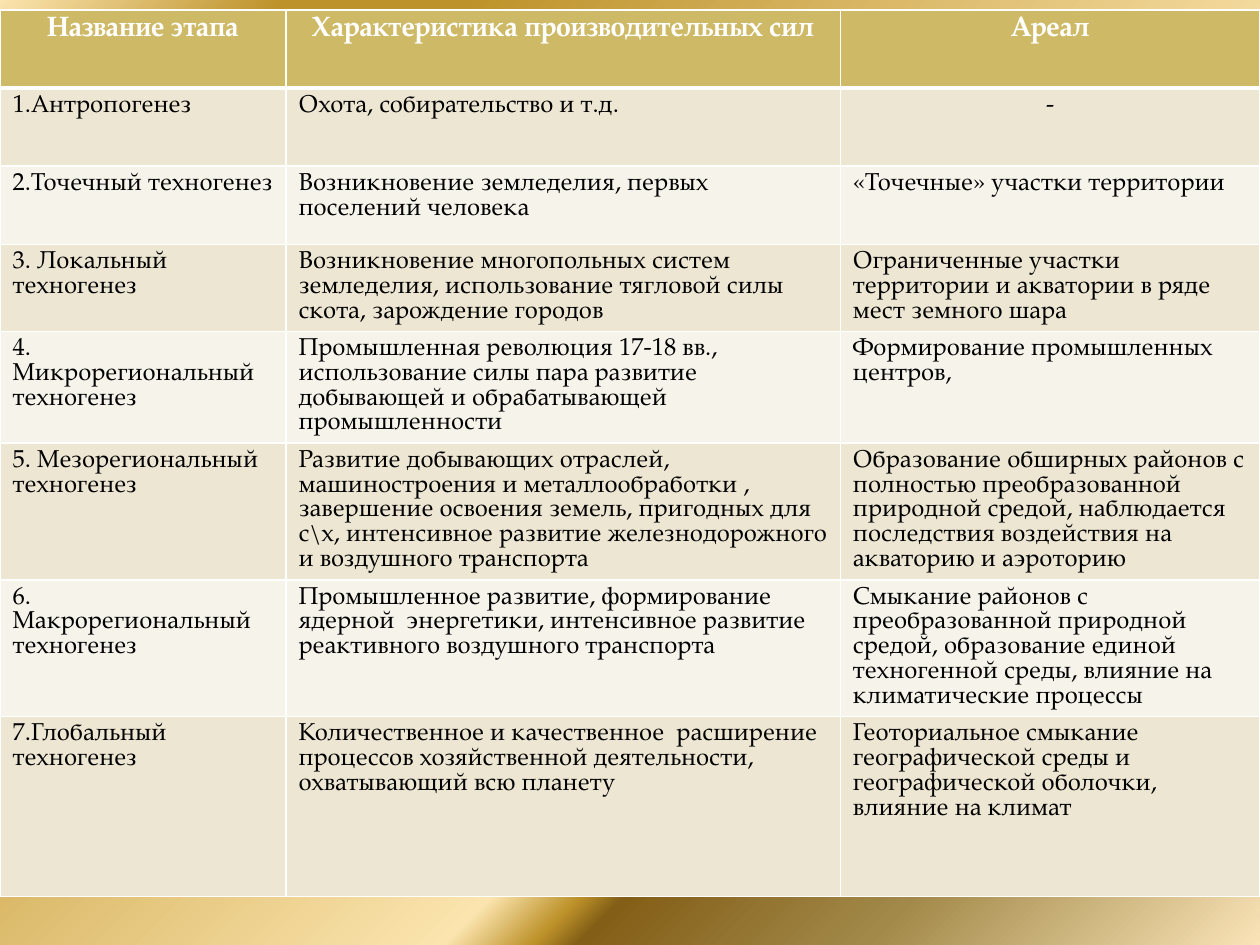
from typing import NamedTuple

import pptx
import pptx.dml.color
import pptx.enum.text
import pptx.oxml
import pptx.oxml.ns
import pptx.util
from lxml import etree

Inches = pptx.util.Inches
Align = pptx.enum.text.PP_ALIGN

FONT = "TeX Gyre Pagella"
COLORS = {
    "header": "CEB966",
    "odd_row": "EDE6D3",
    "even_row": "F6F3EA",
    "border": "FFFFFF",
    "header_text": "FFFFFF",
    "body_text": "000000",
}
BACKGROUND_STOPS = [
    (0, "FBE4AE"), (13, "BD922A"), (21, "BD922A"), (63, "FBE4AE"),
    (67, "BD922A"), (69, "835E17"), (82, "A28949"), (100, "FAE3B7"),
]
BACKGROUND_ANGLE = 45
COLUMN_WIDTHS = [2.27, 4.4, 3.33]
ROW_HEIGHTS = [0.62] * 6 + [0.33, 1.43]
THIN, THICK = 1, 3


class Stage(NamedTuple):
    name: str
    forces: str
    area: str


HEADINGS = Stage("Название этапа", "Характеристика производительных сил", "Ареал")
STAGES = [
    Stage("1.Антропогенез", "Охота, собирательство и т.д.", "-"),
    Stage(
        "2.Точечный техногенез",
        "Возникновение земледелия, первых поселений человека",
        "«Точечные» участки территории",
    ),
    Stage(
        "3. Локальный техногенез",
        "Возникновение многопольных систем земледелия, использование тягловой силы "
        "скота, зарождение городов",
        "Ограниченные участки территории и акватории в ряде мест земного шара",
    ),
    Stage(
        "4. Микрорегиональный техногенез",
        "Промышленная революция 17-18 вв., использование силы пара развитие "
        "добывающей и обрабатывающей промышленности",
        "Формирование промышленных центров,",
    ),
    Stage(
        "5. Мезорегиональный техногенез",
        "Развитие добывающих отраслей, машиностроения и металлообработки , "
        "завершение освоения земель, пригодных для  с\\х, интенсивное развитие "
        "железнодорожного и воздушного транспорта",
        "Образование обширных районов с полностью преобразованной природной средой, "
        "наблюдается последствия воздействия на акваторию и аэроторию",
    ),
    Stage(
        "6. Макрорегиональный техногенез",
        "Промышленное развитие, формирование ядерной  энергетики, интенсивное "
        "развитие реактивного воздушного транспорта",
        "Смыкание районов с преобразованной природной средой, образование единой "
        "техногенной среды, влияние на климатические процессы",
    ),
    Stage(
        "7.Глобальный техногенез",
        "Количественное и качественное  расширение процессов хозяйственной "
        "деятельности, охватывающий всю планету",
        "Геоториальное смыкание географической среды и географической оболочки, "
        "влияние на климат",
    ),
]


def rgb(color: str) -> pptx.dml.color.RGBColor:
    return pptx.dml.color.RGBColor.from_string(COLORS[color])


def add_color(parent, value: str) -> None:
    etree.SubElement(parent, pptx.oxml.ns.qn("a:srgbClr"), val=value)


def paint_background(slide) -> None:
    qn = pptx.oxml.ns.qn
    slide.background.fill.gradient()
    gradient = next(slide.element.iter(qn("a:gradFill")))
    for child in list(gradient):
        gradient.remove(child)
    stops = etree.SubElement(gradient, qn("a:gsLst"))
    for percent, value in BACKGROUND_STOPS:
        add_color(etree.SubElement(stops, qn("a:gs"), pos=str(percent * 1000)), value)
    etree.SubElement(gradient, qn("a:lin"), ang=str(BACKGROUND_ANGLE * 60000), scaled="0")


def set_borders(cell, *, top: float, bottom: float) -> None:
    """Add the side lines; call before the fill, which must follow them."""
    qn = pptx.oxml.ns.qn
    properties = cell._tc.get_or_add_tcPr()
    for side, width in (("L", THIN), ("R", THIN), ("T", top), ("B", bottom)):
        line = etree.SubElement(properties, qn(f"a:ln{side}"), w=str(pptx.util.Pt(width)))
        add_color(etree.SubElement(line, qn("a:solidFill")), COLORS["border"])


def write_text(frame, text: str, *, size: float, color: str,
               bold: bool = False, align=Align.LEFT) -> None:
    paragraph = frame.paragraphs[0]
    paragraph.alignment = align
    run = paragraph.add_run()
    run.text = text
    run.font.name = FONT
    run.font.size = pptx.util.Pt(size)
    run.font.bold = bold
    run.font.color.rgb = rgb(color)


def add_stage_table(slide) -> None:
    rows = [HEADINGS, *STAGES]
    frame = slide.shapes.add_table(
        len(rows), len(COLUMN_WIDTHS), 0, Inches(0.08), Inches(10), Inches(7.42))
    table = frame.table
    for column, width in zip(table.columns, COLUMN_WIDTHS):
        column.width = Inches(width)
    for row, height in zip(table.rows, ROW_HEIGHTS):
        row.height = Inches(height)
    frame.height = Inches(7.42)

    for r, stage in enumerate(rows):
        is_header = r == 0
        fill = "header" if is_header else "odd_row" if r % 2 else "even_row"
        for c, text in enumerate(stage):
            cell = table.cell(r, c)
            set_borders(cell, top=THICK if r == 1 else THIN,
                        bottom=THICK if is_header else THIN)
            cell.fill.solid()
            cell.fill.fore_color.rgb = rgb(fill)
            centred = is_header or text == "-"
            write_text(cell.text_frame, text,
                       size=16 if is_header else 14,
                       color="header_text" if is_header else "body_text",
                       bold=is_header,
                       align=Align.CENTER if centred else Align.LEFT)


def main() -> None:
    presentation = pptx.Presentation()
    presentation.slide_width = Inches(10)
    presentation.slide_height = Inches(7.5)
    slide = presentation.slides.add_slide(presentation.slide_layouts[6])
    paint_background(slide)
    add_stage_table(slide)
    presentation.save("out.pptx")


if __name__ == "__main__":
    main()
